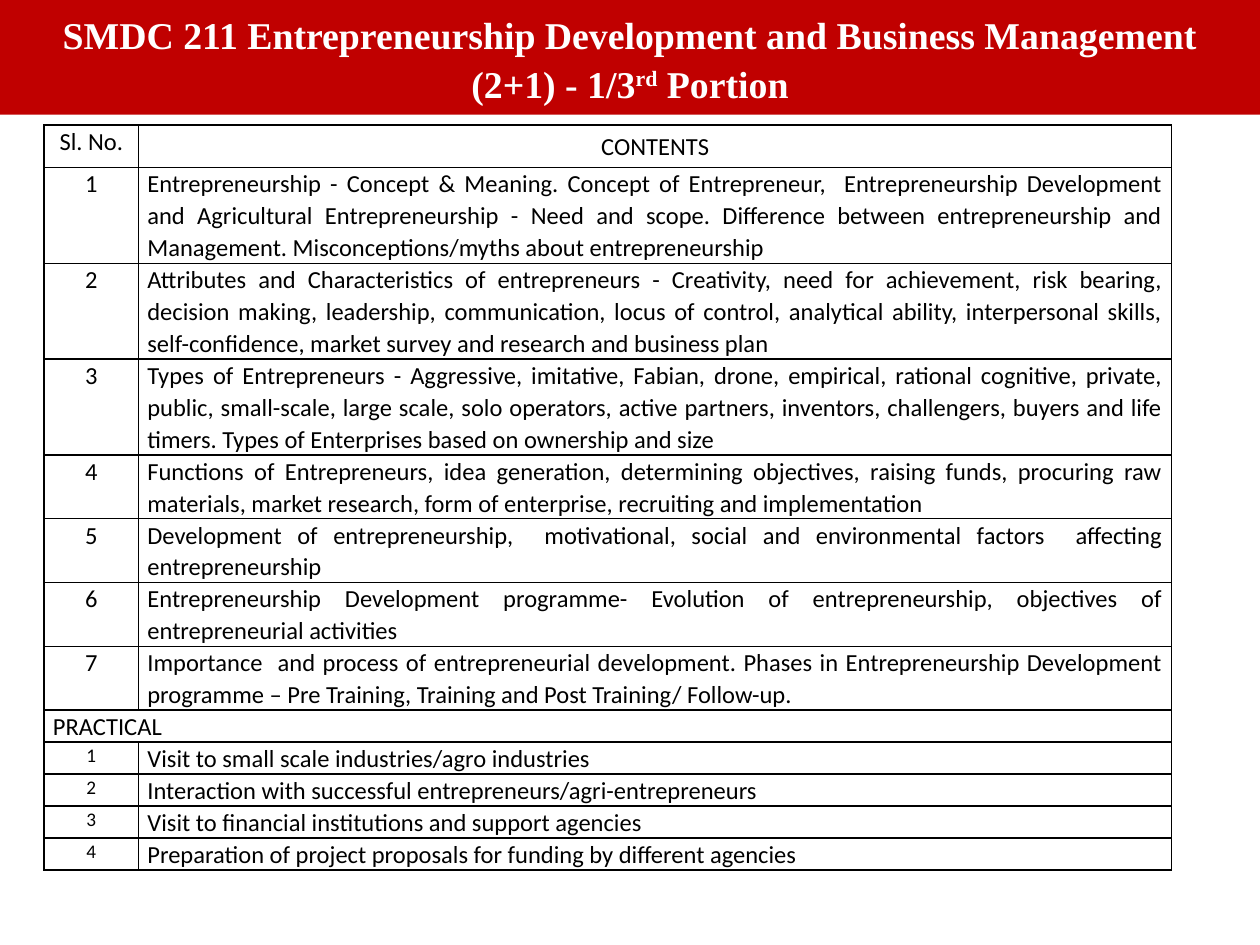
from lxml import etree
from pptx import Presentation
from pptx.dml.color import RGBColor
from pptx.enum.text import MSO_ANCHOR, MSO_AUTO_SIZE, PP_ALIGN
from pptx.oxml.ns import qn
from pptx.util import Inches, Pt

LEFT, MID, JUST = PP_ALIGN.LEFT, PP_ALIGN.CENTER, PP_ALIGN.JUSTIFY
TOP, CENTRE = MSO_ANCHOR.TOP, MSO_ANCHOR.MIDDLE
FIXED = MSO_AUTO_SIZE.NONE

# Content
TITLE = [
    ("SMDC 211 Entrepreneurship Development and Business Management", False),
    ("\n", False),
    ("(2+1) - 1/3", False),
    ("rd", True),
    (" Portion", False),
]
HEAD = ("Sl. No.", "CONTENTS")
# Each topic goes with the number of lines it takes
THEORY = [
    ("Entrepreneurship - Concept & Meaning. Concept of Entrepreneur,  "
     "Entrepreneurship Development and Agricultural Entrepreneurship - Need "
     "and scope. Difference between entrepreneurship and Management. "
     "Misconceptions/myths about entrepreneurship", 3),
    ("Attributes and Characteristics of entrepreneurs - Creativity, need for "
     "achievement, risk bearing, decision making, leadership, communication, "
     "locus of control, analytical ability, interpersonal skills, "
     "self-confidence, market survey and research and business plan", 3),
    ("Types of Entrepreneurs - Aggressive, imitative, Fabian, drone, "
     "empirical, rational cognitive, private, public, small-scale, large "
     "scale, solo operators, active partners, inventors, challengers, buyers "
     "and life timers. Types of Enterprises based on ownership and size", 3),
    ("Functions of Entrepreneurs, idea generation, determining objectives, "
     "raising funds, procuring raw materials, market research, form of "
     "enterprise, recruiting and implementation", 2),
    ("Development of entrepreneurship,  motivational, social and "
     "environmental factors  affecting entrepreneurship", 2),
    ("Entrepreneurship Development programme- Evolution of "
     "entrepreneurship, objectives of entrepreneurial activities", 2),
    ("Importance  and process of entrepreneurial development. Phases in "
     "Entrepreneurship Development programme – Pre Training, Training and "
     "Post Training/ Follow-up.", 2),
]
BREAK = "PRACTICAL"
TASKS = [
    "Visit to small scale industries/agro industries",
    "Interaction with successful entrepreneurs/agri-entrepreneurs",
    "Visit to financial institutions and support agencies",
    "Preparation of project proposals for funding by different agencies",
]

THEME = {
    "band": RGBColor(0xC0, 0x00, 0x00),
    "light": RGBColor(0xFF, 0xFF, 0xFF),
    "ink": RGBColor(0x00, 0x00, 0x00),
    "rule": "000000",
    "serif": "Times New Roman",
    "sans": "Calibri",
    "title": 21.6,
    "body": 14,
    "small": 11,
}
COLS = (0.75, 8.2)
HEAD_H, LINE_H = 0.34, 0.25


def write(frame, runs, size=THEME["body"], font=THEME["sans"],
          color=THEME["ink"], bold=False, align=LEFT):
    """Fill a frame with one paragraph of (text, raised) runs."""
    para = frame.paragraphs[0]
    para.alignment = align
    para.line_spacing = 1.07
    para.space_before, para.space_after = Pt(0), Pt(8)
    for text, raised in runs:
        if text == "\n":
            para.add_line_break()
            continue
        run = para.add_run()
        run.text = text
        run.font.size, run.font.name = Pt(size), font
        run.font.bold = bold
        run.font.color.rgb = color
        if raised:
            run.font._element.set("baseline", "30000")


def border(cell):
    """Draw a thin line on all four sides."""
    props = cell._tc.get_or_add_tcPr()
    for spot, side in enumerate(("a:lnL", "a:lnR", "a:lnT", "a:lnB")):
        line = etree.Element(qn(side), w=str(Pt(1)))
        fill = etree.SubElement(line, qn("a:solidFill"))
        etree.SubElement(fill, qn("a:srgbClr"), val=THEME["rule"])
        props.insert(spot, line)


def put(cell, text, anchor=TOP, **style):
    cell.margin_left = cell.margin_right = Inches(0.07)
    cell.margin_top = cell.margin_bottom = 0
    cell.vertical_anchor = anchor
    write(cell.text_frame, [(text, False)], **style)


deck = Presentation()
deck.slide_width, deck.slide_height = Inches(10), Inches(7.5)
slide = deck.slides.add_slide(deck.slide_layouts[5])

# Title band
title = slide.shapes.title
title.left, title.top = 0, 0
title.width, title.height = Inches(10), Inches(0.91)
title.fill.solid()
title.fill.fore_color.rgb = THEME["band"]
title.text_frame.auto_size = FIXED
title.text_frame.vertical_anchor = CENTRE
write(title.text_frame, TITLE, size=THEME["title"], font=THEME["serif"],
      color=THEME["light"], bold=True, align=MID)

# Table grid
lines = [count for _, count in THEORY] + [1] * (1 + len(TASKS))
highs = [HEAD_H] + [count * LINE_H for count in lines]
table = slide.shapes.add_table(
    len(highs), len(COLS), Inches(0.35), Inches(0.99),
    Inches(sum(COLS)), Inches(sum(highs))).table
table.first_row = table.horz_banding = False
for col, wide in zip(table.columns, COLS):
    col.width = Inches(wide)
for row, high in zip(table.rows, highs):
    row.height = Inches(high)
for cell in table.iter_cells():
    cell.fill.background()
    border(cell)

# Heading and theory rows
put(table.cell(0, 0), HEAD[0], align=MID)
put(table.cell(0, 1), HEAD[1], anchor=CENTRE, align=MID)
for num, (topic, _) in enumerate(THEORY, 1):
    put(table.cell(num, 0), str(num), align=MID)
    put(table.cell(num, 1), topic, align=JUST)

# Practical rows
split = len(THEORY) + 1
table.cell(split, 0).merge(table.cell(split, 1))
put(table.cell(split, 0), BREAK)
for num, task in enumerate(TASKS, 1):
    put(table.cell(split + num, 0), str(num), size=THEME["small"], align=MID)
    put(table.cell(split + num, 1), task)

deck.save("out.pptx")
